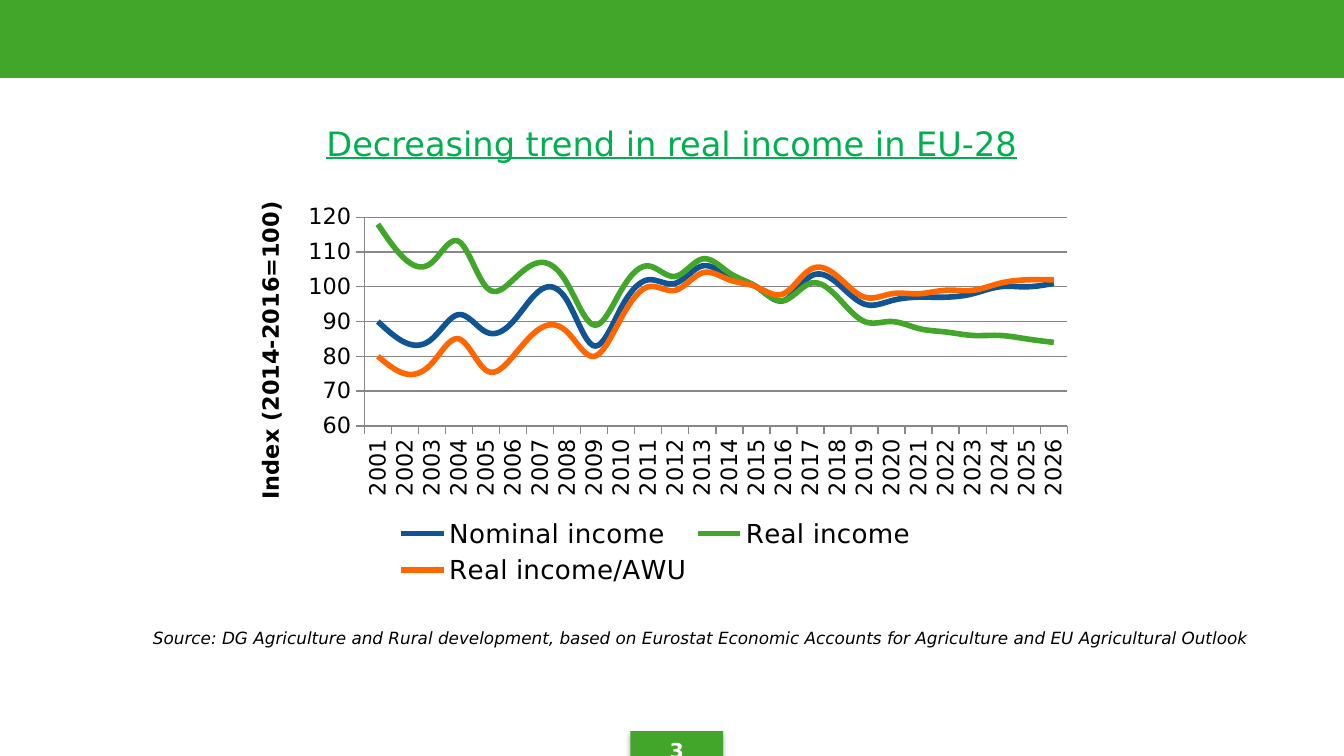
from dataclasses import dataclass

from lxml import etree
from pptx import Presentation
from pptx.chart.data import CategoryChartData
from pptx.dml.color import RGBColor
from pptx.enum import chart as ch, shapes, text
from pptx.oxml import ns, parse_xml
from pptx.util import Inches, Pt


@dataclass(frozen=True)
class Theme:
    font: str = "DejaVu Sans"
    green: str = "42A62A"
    heading: str = "00B050"
    blue: str = "0F5494"
    orange: str = "FF6600"
    grid: str = "878787"
    ink: str = "000000"
    white: str = "FFFFFF"
    title_size: int = 18
    legend_size: int = 14
    axis_size: int = 12
    number_size: int = 11
    source_size: int = 9


THEME = Theme()
YEARS = [str(year) for year in range(2001, 2027)]
INCOMES = [
    ("Nominal income", THEME.blue,
     [90, 84, 85, 92, 87, 90, 99, 96, 83, 94, 102, 101, 106,
      103, 100, 96, 103, 101, 95, 96, 97, 97, 98, 100, 100, 101]),
    ("Real income", THEME.green,
     [118, 108, 107, 113, 100, 102, 107, 101, 89, 99, 106, 103, 108,
      104, 100, 96, 101, 97, 90, 90, 88, 87, 86, 86, 85, 84]),
    ("Real income/AWU", THEME.orange,
     [80, 75, 78, 85, 76, 80, 88, 87, 80, 91, 100, 99, 104,
      102, 100, 98, 105, 103, 97, 98, 98, 99, 99, 101, 102, 102]),
]


def inches(box):
    return [Inches(length) for length in box]


def style(font, size, color, bold=False, italic=False, underline=False):
    font.name, font.size = THEME.font, Pt(size)
    font.bold, font.italic = bold, italic
    if underline:
        font.underline = True
    font.color.rgb = RGBColor.from_string(color)


def add_bar(slide, box):
    bar = slide.shapes.add_shape(shapes.MSO_SHAPE.RECTANGLE, *inches(box))
    bar.shadow.inherit = False
    bar.fill.solid()
    bar.fill.fore_color.rgb = RGBColor.from_string(THEME.green)
    bar.line.fill.background()
    return bar


def add_title(slide, box, wording):
    title = slide.shapes.title
    title.left, title.top, title.width, title.height = inches(box)
    frame = title.text_frame
    frame.text = wording
    frame.vertical_anchor = text.MSO_ANCHOR.MIDDLE
    frame.paragraphs[0].alignment = text.PP_ALIGN.CENTER
    style(frame.paragraphs[0].runs[0].font, THEME.title_size, THEME.heading, underline=True)


def set_layout(parent, position, target, fractions):
    for old in parent.findall(ns.qn("c:layout")):
        parent.remove(old)
    layout = etree.Element(ns.qn("c:layout"))
    manual = etree.SubElement(layout, ns.qn("c:manualLayout"))
    settings = [("layoutTarget", target)] if target else []
    settings += [("xMode", "edge"), ("yMode", "edge"), *zip("xywh", fractions)]
    for tag, value in settings:
        etree.SubElement(manual, ns.qn(f"c:{tag}")).set("val", str(value))
    parent.insert(position, layout)


def style_axis(axis):
    style(axis.tick_labels.font, THEME.axis_size, THEME.ink)
    axis.major_tick_mark = ch.XL_TICK_MARK.OUTSIDE
    axis.minor_tick_mark = ch.XL_TICK_MARK.NONE
    axis.format.line.color.rgb = RGBColor.from_string(THEME.grid)


def add_income_chart(slide, box):
    data = CategoryChartData()
    data.categories = YEARS
    for name, _, values in INCOMES:
        data.add_series(name, values)
    chart = slide.shapes.add_chart(ch.XL_CHART_TYPE.LINE, *inches(box), data).chart
    chart.has_title = False
    style(chart.font, THEME.legend_size, THEME.ink)
    chart.plots[0].vary_by_categories = False
    for series, (_, color, _) in zip(chart.plots[0].series, INCOMES):
        series.smooth = True
        series.marker.style = ch.XL_MARKER_STYLE.NONE
        series.format.line.width = Pt(3)
        series.format.line.color.rgb = RGBColor.from_string(color)

    years, index = chart.category_axis, chart.value_axis
    style_axis(years)
    style_axis(index)
    years._element.find(ns.qn("c:txPr")).find(ns.qn("a:bodyPr")).set("rot", "-5400000")
    index.minimum_scale, index.maximum_scale, index.major_unit = 60, 120, 10
    index.has_major_gridlines = True
    index.major_gridlines.format.line.color.rgb = RGBColor.from_string(THEME.grid)
    caption = index.axis_title.text_frame
    caption.text = "Index (2014-2016=100)"
    style(caption.paragraphs[0].runs[0].font, THEME.axis_size, THEME.ink, bold=True)

    chart.has_legend = True
    chart.legend.position = ch.XL_LEGEND_POSITION.BOTTOM
    chart.legend.include_in_layout = False
    style(chart.legend.font, THEME.legend_size, THEME.ink)
    plot_area = chart._chartSpace.chart.plotArea
    set_layout(plot_area, 0, "inner", (0.16, 0.05, 0.82, 0.53))
    set_layout(chart.legend._element, 1, None, (0.19, 0.8, 0.62, 0.2))


def add_source(slide, box, wording):
    frame = slide.shapes.add_textbox(*inches(box)).text_frame
    frame.word_wrap = True
    frame.vertical_anchor = text.MSO_ANCHOR.MIDDLE
    frame.text = wording
    style(frame.paragraphs[0].runs[0].font, THEME.source_size, THEME.ink, italic=True)


def add_page_number(slide, box, number):
    badge = add_bar(slide, box)
    badge._element.spPr.find(ns.qn("a:effectLst")).append(parse_xml(
        f'<a:outerShdw {ns.nsdecls("a")} blurRad="{Pt(3.1)}" dist="{Pt(1.8)}" dir="5400000">'
        f'<a:srgbClr val="{THEME.ink}"><a:alpha val="35000"/></a:srgbClr></a:outerShdw>'))
    frame = badge.text_frame
    frame.vertical_anchor = text.MSO_ANCHOR.TOP
    frame.text = str(number)
    frame.paragraphs[0].alignment = text.PP_ALIGN.CENTER
    style(frame.paragraphs[0].runs[0].font, THEME.number_size, THEME.white, bold=True)


def main():
    deck = Presentation()
    deck.slide_width = Inches(10)
    deck.slide_height = deck.slide_width * 9 // 16
    slide = deck.slides.add_slide(deck.slide_layouts[5])
    add_bar(slide, (0, 0, 10, 0.58))
    add_title(slide, (0, 0.86, 10, 0.41), "Decreasing trend in real income in EU-28")
    add_income_chart(slide, (1.69, 1.47, 6.38, 2.93))
    add_source(slide, (1.04, 4.54, 8.66, 0.41),
               "Source: DG Agriculture and Rural development, based on Eurostat "
               "Economic Accounts for Agriculture and EU Agricultural Outlook")
    add_page_number(slide, (4.69, 5.44, 0.69, 0.19), 3)
    deck.save("out.pptx")


if __name__ == "__main__":
    main()
